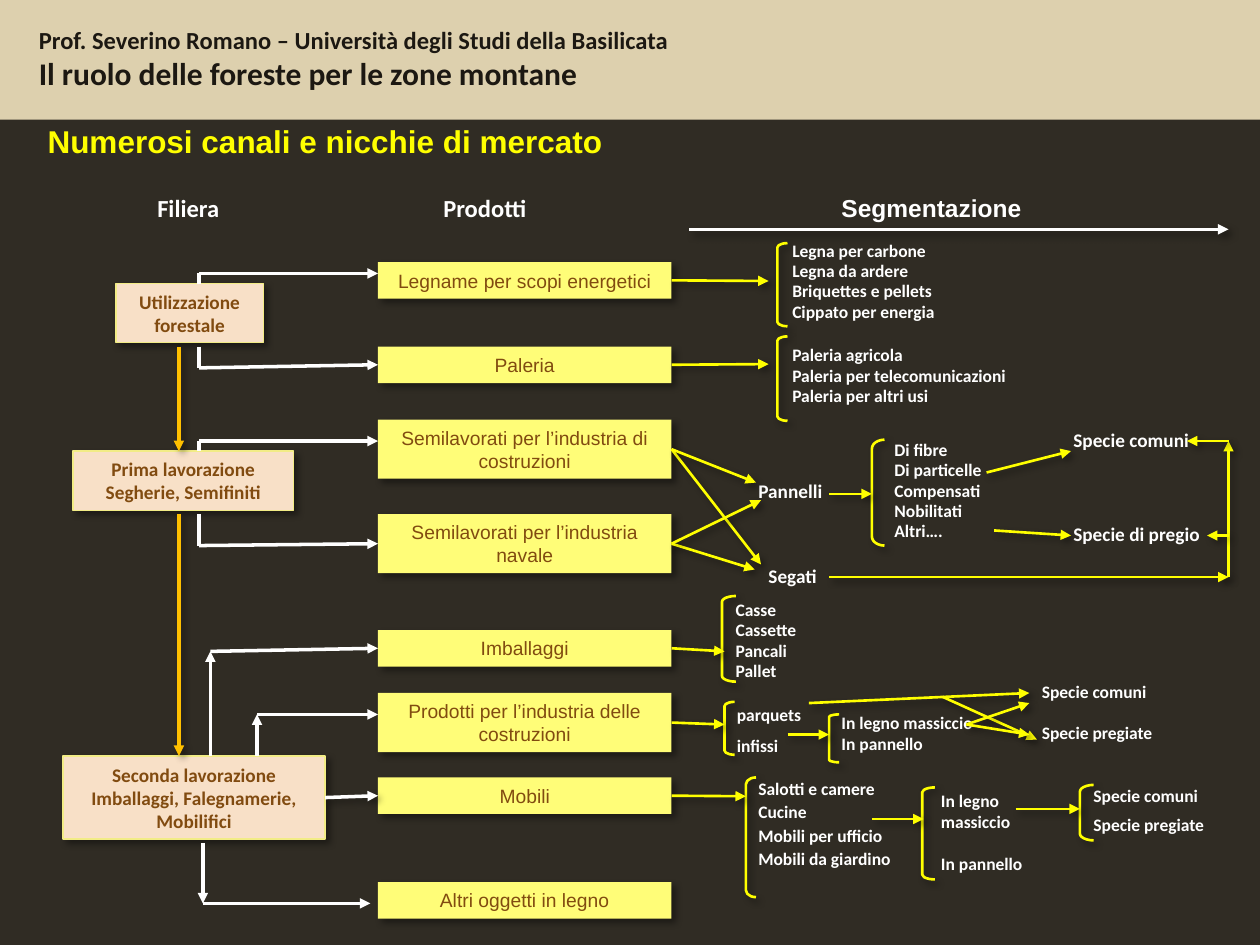
"""Build a slide that maps the timber supply chain to its products and market segments."""
from dataclasses import dataclass
from typing import Any

import pptx
import pptx.dml.color
import pptx.enum.shapes
import pptx.enum.text
import pptx.oxml
import pptx.oxml.ns
import pptx.util

Inches = pptx.util.Inches
Pt = pptx.util.Pt
Kind = pptx.enum.shapes.MSO_SHAPE
Align = pptx.enum.text.PP_ALIGN
Anchor = pptx.enum.text.MSO_ANCHOR

DARK, SAND, INK = "302C24", "DDD0AE", "1C1812"
YELLOW, WHITE, ORANGE = "FFFF00", "FFFFFF", "FFC000"
BROWN, LEMON, PEACH, PEACH_EDGE = "814B10", "FFFD78", "F8E0C7", "F2EC86"
MAIN_WIDTH, BRANCH_WIDTH = 2, 1.5
SNAP = 0.03


@dataclass
class Label:
    left: float
    top: float
    width: float
    height: float
    lines: tuple[str, ...]
    size: float = 10
    spacing: float = 0.55
    gap: float = 5
    font: str = "Calibri"
    color: str = WHITE
    align: Any = Align.LEFT


@dataclass
class Box:
    left: float
    top: float
    width: float
    height: float
    text: str

    def side_midpoints(self) -> list[tuple[float, float]]:
        """Return the middles of the top, left, bottom and right sides."""
        middle_x, middle_y = self.left + self.width / 2, self.top + self.height / 2
        return [(middle_x, self.top), (self.left, middle_y),
                (middle_x, self.top + self.height), (self.left + self.width, middle_y)]


@dataclass
class Bracket:
    left: float
    top: float
    width: float
    height: float
    curve: float = 0.42


@dataclass
class Line:
    start: tuple[float, float]
    end: tuple[float, float]
    color: str = YELLOW
    width: float = BRANCH_WIDTH
    arrow: bool = True
    shadow: bool = True


@dataclass
class Elbow:
    x: float
    start_y: float
    end_y: float
    end_x: float = 3
    arrow_at_corner: bool = False


LABELS = [
    Label(-0.07, 0.92, 5.3, 0.42, ("Numerosi canali e nicchie di mercato",), 18, 1,
          font="Arial", color=YELLOW, align=Align.CENTER),
    Label(1.15, 1.48, 0.93, 0.34, ("Filiera",), 14, 1),
    Label(3.42, 1.48, 1.24, 0.34, ("Prodotti",), 14, 1),
    Label(6.58, 1.48, 1.86, 0.34, ("Segmentazione",), 14, 1, font="Arial"),
    Label(6.19, 1.92, 2.5, 0.74, ("Legna per carbone", "Legna da ardere",
                                  "Briquettes e pellets", "Cippato per energia")),
    Label(6.19, 2.75, 2.5, 0.56, ("Paleria agricola", "Paleria per telecomunicazioni",
                                  "Paleria per altri usi")),
    Label(7, 3.5, 1.25, 0.91, ("Di fibre", "Di particelle", "Compensati", "Nobilitati", "Altri….")),
    Label(5.92, 3.83, 0.92, 0.22, ("Pannelli",), 11),
    Label(6, 4.5, 0.92, 0.22, ("Segati",), 11),
    Label(8.42, 3.42, 1.25, 0.22, ("Specie comuni",), 11),
    Label(8.42, 4.17, 1.33, 0.22, ("Specie di pregio",), 11),
    Label(5.74, 4.77, 1.05, 0.74, ("Casse", "Cassette", "Pancali", "Pallet")),
    Label(5.75, 5.6, 0.83, 0.21, ("parquets",)),
    Label(5.75, 5.85, 0.83, 0.21, ("infissi",)),
    Label(6.58, 5.67, 1.38, 0.38, ("In legno massiccio", "In pannello")),
    Label(8.17, 5.42, 1.25, 0.21, ("Specie comuni",)),
    Label(8.17, 5.75, 1.25, 0.21, ("Specie pregiate",)),
    Label(5.92, 6.17, 1.25, 0.95, ("Salotti e camere", "Cucine", "Mobili per ufficio",
                                   "Mobili da giardino"), spacing=0.7),
    Label(7.37, 6.22, 1.14, 0.77, ("In legno massiccio", "In pannello"), spacing=1, gap=12),
    Label(8.58, 6.25, 1.25, 0.21, ("Specie comuni",)),
    Label(8.58, 6.48, 1.25, 0.21, ("Specie pregiate",)),
]
PRODUCTS = [Box(3, top, 2.33, height, text) for top, height, text in [
    (2.08, 0.29, "Legname per scopi energetici"),
    (2.75, 0.29, "Paleria"),
    (3.33, 0.47, "Semilavorati per l’industria di costruzioni"),
    (4.08, 0.47, "Semilavorati per l’industria navale"),
    (5, 0.29, "Imballaggi"),
    (5.5, 0.47, "Prodotti per l’industria delle costruzioni"),
    (6.17, 0.29, "Mobili"),
    (7, 0.29, "Altri oggetti in legno")]]
STAGES = [Box(0.92, 2.25, 1.17, 0.47, "Utilizzazione forestale"),
          Box(0.58, 3.58, 1.75, 0.47, "Prima lavorazione Segherie, Semifiniti"),
          Box(0.5, 6, 2.08, 0.66, "Seconda lavorazione Imballaggi, Falegnamerie, Mobilifici")]
BRACKETS = [Bracket(6.17, 1.93, 0.08, 0.66), Bracket(6.17, 2.67, 0.08, 0.67),
            Bracket(6.92, 3.49, 0.1, 0.84, 0.72), Bracket(5.73, 4.73, 0.11, 0.68),
            Bracket(5.75, 5.57, 0.08, 0.42), Bracket(6.58, 5.67, 0.08, 0.38, 0.25),
            Bracket(5.92, 6.17, 0.08, 0.95, 0.67), Bracket(7.32, 6.25, 0.1, 0.73, 0.38),
            Bracket(8.57, 6.23, 0.11, 0.44, 0.5)]
ELBOWS = [Elbow(1.58, 2.25, 2.17), Elbow(1.58, 2.75, 2.92), Elbow(1.58, 3.58, 3.5),
          Elbow(1.58, 4.08, 4.33), Elbow(1.67, 6, 5.17, arrow_at_corner=True),
          Elbow(2.04, 6, 5.67, arrow_at_corner=True),
          Elbow(1.61, 6.69, 7.17, 2.94, arrow_at_corner=True)]
MAIN_LINES = [Line(start, end, color, MAIN_WIDTH) for start, end, color in [
    ((5.47, 1.82), (9.75, 1.82), WHITE), ((2.58, 6.33), (3, 6.33), WHITE),
    ((1.42, 2.75), (1.42, 3.58), ORANGE), ((1.42, 4.08), (1.42, 6), ORANGE)]]
BRANCHES = [Line(start, end) for start, end in [
    ((5.35, 2.23), (6.1, 2.23)), ((5.35, 2.89), (6.1, 2.89)),
    ((5.33, 3.58), (6.04, 4.48)), ((5.33, 4.33), (5.99, 4.52)),
    ((5.33, 4.33), (6.04, 3.97)), ((5.33, 3.58), (6, 3.83)),
    ((6.58, 3.92), (6.92, 3.92)), ((7.83, 3.75), (8.5, 3.58)),
    ((7.89, 4.21), (8.5, 4.25)), ((6.58, 4.58), (9.75, 4.58)),
    ((9.75, 4.58), (9.75, 3.5)), ((9.75, 4.25), (9.58, 4.25)),
    ((9.75, 3.5), (9.42, 3.5)), ((5.33, 5.17), (5.75, 5.17)),
    ((5.33, 5.75), (5.75, 5.75)), ((6.25, 5.83), (6.58, 5.83)),
    ((6.42, 5.58), (8.17, 5.5)), ((7.48, 5.53), (8.23, 5.87)),
    ((7.67, 5.75), (8.17, 5.58)), ((7.67, 5.75), (8.17, 5.83)),
    ((5.33, 6.32), (5.92, 6.32)), ((6.92, 6.5), (7.33, 6.5)), ((8.06, 6.42), (8.57, 6.42))]]


def rgb(value: str) -> pptx.dml.color.RGBColor:
    """Turn a hex string into a colour."""
    return pptx.dml.color.RGBColor.from_string(value)


def set_shadow(shape: Any, visible: bool = True) -> None:
    """Give a shape a soft diagonal shadow, or none."""
    shadow = ('<a:outerShdw blurRad="50800" dist="38100" dir="2700000" algn="tl" rotWithShape="0">'
              '<a:srgbClr val="000000"><a:alpha val="40000"/></a:srgbClr></a:outerShdw>')
    shape._element.spPr.append(pptx.oxml.parse_xml(
        f'<a:effectLst {pptx.oxml.ns.nsdecls("a")}>{shadow if visible else ""}</a:effectLst>'))


def format_paragraph(paragraph: Any, size: float, font: str, color: str, bold: bool = True) -> None:
    """Format every run of a paragraph."""
    for run in paragraph.runs:
        run.font.size, run.font.name, run.font.bold = Pt(size), font, bold
        run.font.color.rgb = rgb(color)


def add_label(slide: Any, label: Label) -> Any:
    """Add a text box with one paragraph per line."""
    shape = slide.shapes.add_textbox(*map(Inches, (label.left, label.top, label.width, label.height)))
    shape.text_frame.word_wrap = True
    shape.text_frame.text = "\n".join(label.lines)
    for index, paragraph in enumerate(shape.text_frame.paragraphs):
        paragraph.alignment, paragraph.line_spacing = label.align, label.spacing
        paragraph.space_before = Pt(label.gap if index else 0)
        format_paragraph(paragraph, label.size, label.font, label.color)
    return shape


def add_box(slide: Any, box: Box, fill: str, edge: str | None, font: str, bold: bool) -> Any:
    """Add a filled, shadowed rectangle with centred text."""
    shape = slide.shapes.add_shape(
        Kind.RECTANGLE, *map(Inches, (box.left, box.top, box.width, box.height)))
    shape.fill.solid()
    shape.fill.fore_color.rgb = rgb(fill)
    if edge:
        shape.line.color.rgb, shape.line.width = rgb(edge), Pt(0.75)
    else:
        shape.line.fill.background()
    set_shadow(shape, bool(box.text))
    shape.text_frame.word_wrap = True
    shape.text_frame.vertical_anchor = Anchor.MIDDLE
    shape.text_frame.text = box.text
    paragraph = shape.text_frame.paragraphs[0]
    paragraph.alignment = Align.CENTER
    format_paragraph(paragraph, 11, font, BROWN, bold)
    return shape


def add_bracket(slide: Any, bracket: Bracket) -> None:
    """Add a yellow left bracket."""
    shape = slide.shapes.add_shape(
        Kind.LEFT_BRACKET, *map(Inches, (bracket.left, bracket.top, bracket.width, bracket.height)))
    shape.adjustments[0] = bracket.curve
    shape.fill.background()
    shape.line.color.rgb, shape.line.width = rgb(YELLOW), Pt(BRANCH_WIDTH)
    set_shadow(shape)


def add_line(slide: Any, line: Line, boxes: list[tuple[Box, Any]]) -> None:
    """Add a straight connector, joined to any box side whose middle it meets."""
    connector = slide.shapes.add_connector(
        pptx.enum.shapes.MSO_CONNECTOR.STRAIGHT, *map(Inches, line.start + line.end))
    connector.line.color.rgb, connector.line.width = rgb(line.color), Pt(line.width)
    if line.arrow:
        connector.line._get_or_add_ln().append(pptx.oxml.parse_xml(
            f'<a:tailEnd {pptx.oxml.ns.nsdecls("a")} type="triangle"/>'))
    set_shadow(connector, line.shadow)
    for box, shape in boxes:
        for side, (x, y) in enumerate(box.side_midpoints()):
            for point, join in ((line.start, connector.begin_connect), (line.end, connector.end_connect)):
                if abs(point[0] - x) < SNAP and abs(point[1] - y) < SNAP:
                    join(shape, side)


def add_elbow(slide: Any, elbow: Elbow, boxes: list[tuple[Box, Any]]) -> None:
    """Add a white vertical line followed by a horizontal arrow."""
    corner = (elbow.x, elbow.end_y)
    add_line(slide, Line((elbow.x, elbow.start_y), corner, WHITE, MAIN_WIDTH,
                         elbow.arrow_at_corner, False), boxes)
    add_line(slide, Line(corner, (elbow.end_x, elbow.end_y), WHITE, MAIN_WIDTH, shadow=False), boxes)


def main() -> None:
    """Build and save the slide."""
    presentation = pptx.Presentation()
    presentation.slide_width, presentation.slide_height = Inches(10), Inches(7.5)
    slide = presentation.slides.add_slide(presentation.slide_layouts[6])
    slide.background.fill.solid()
    slide.background.fill.fore_color.rgb = rgb(DARK)
    add_box(slide, Box(0, 0, 10, 0.95, ""), SAND, None, "Calibri", False)
    heading = add_label(slide, Label(0.21, 0.15, 6.66, 0.64, (
        "Prof. Severino Romano – Università degli Studi della Basilicata",
        "Il ruolo delle foreste per le zone montane"), 14, 1, 0, color=INK))
    format_paragraph(heading.text_frame.paragraphs[1], 18, "Calibri", INK)
    boxes = [(box, add_box(slide, box, LEMON, None, "Arial", False)) for box in PRODUCTS]
    boxes += [(box, add_box(slide, box, PEACH, PEACH_EDGE, "Calibri", True)) for box in STAGES]
    for elbow in ELBOWS:
        add_elbow(slide, elbow, boxes)
    for label in LABELS:
        add_label(slide, label)
    for bracket in BRACKETS:
        add_bracket(slide, bracket)
    for line in MAIN_LINES + BRANCHES:
        add_line(slide, line, boxes)
    presentation.save("out.pptx")


if __name__ == "__main__":
    main()
